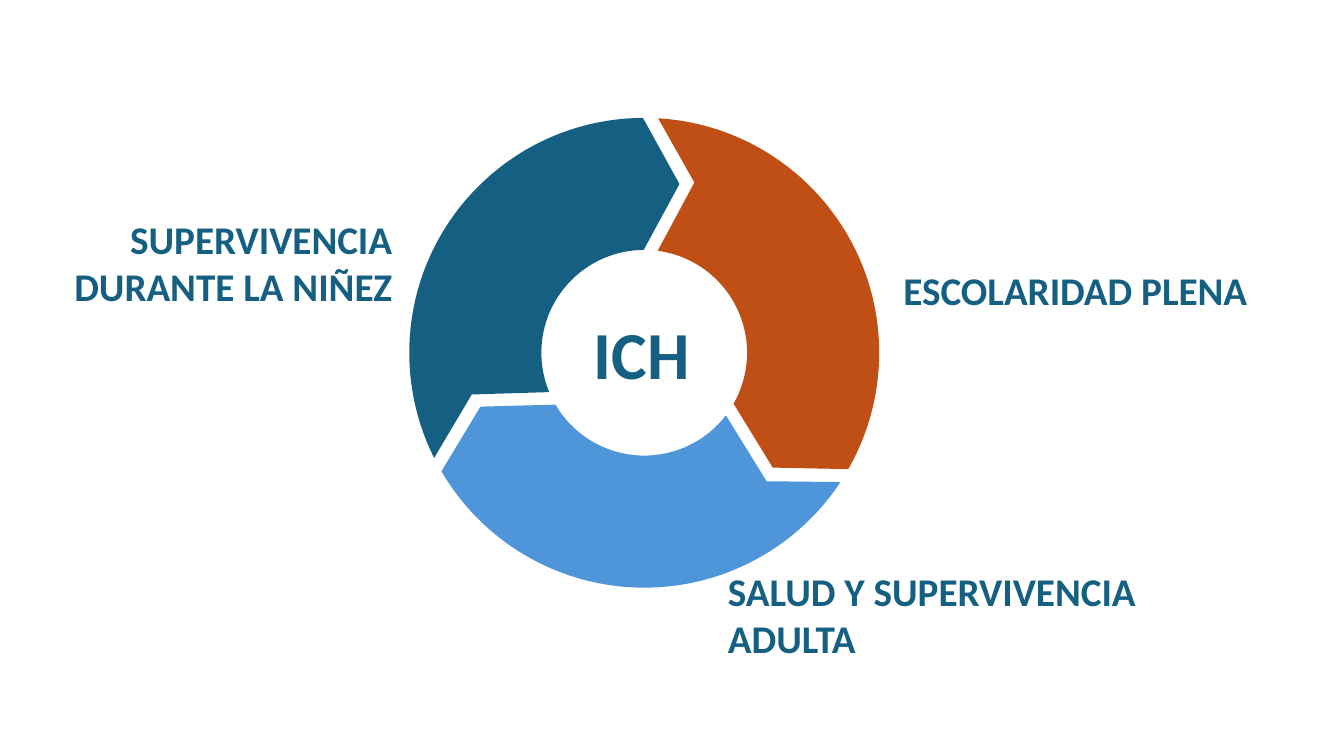
import math
from dataclasses import dataclass

from lxml import etree
from pptx import Presentation
from pptx.dml.color import RGBColor
from pptx.enum import text
from pptx.oxml.ns import qn
from pptx import util as u
from pptx.shapes.autoshape import Shape
from pptx.shapes.shapetree import SlideShapes
from pptx.slide import Slide

PX = 9144  # EMU per px, 100 px to the inch
TEAL = RGBColor(0x15, 0x60, 0x82)
ORANGE = RGBColor(0xC0, 0x4F, 0x15)
BLUE = RGBColor(0x4E, 0x95, 0xD9)

CENTRE = (639, 350)
OUTER, INNER = 233, 102
SEGMENT_COLORS = (ORANGE, BLUE, TEAL)  # clockwise from the top

Point = tuple[int, int]


@dataclass(frozen=True)
class Label:
    text: str
    left: int
    top: int
    width: int
    height: int
    align: text.PP_ALIGN = text.PP_ALIGN.LEFT


@dataclass(frozen=True)
class Step:
    """Move to a point in EMU, curved when control points are given."""
    end: Point
    controls: tuple[Point, ...] = ()


LABELS = (
    Label("SUPERVIVENCIA DURANTE LA NIÑEZ", 23, 214, 366, 94, text.PP_ALIGN.RIGHT),
    Label("SALUD Y SUPERVIVENCIA ADULTA", 722, 563, 506, 94),
    Label("ESCOLARIDAD PLENA", 896, 264, 417, 47),
)
HEADING = Label("ICH", 589, 310, 201, 81)


def px(n: int) -> u.Emu:
    return u.Emu(n * PX)


def polar(radius: float, angle: float) -> Point:
    """Point in EMU, with the angle in degrees clockwise from the top."""
    a = math.radians(angle)
    x, y = CENTRE
    return (round((x + radius * math.sin(a)) * PX),
            round((y - radius * math.cos(a)) * PX))


def arc(radius: float, start: float, end: float) -> Step:
    """Approximate an arc by one cubic curve."""
    sweep = math.radians(end - start)
    reach = 4 / 3 * math.tan(sweep / 4)
    handle = radius * math.hypot(1, reach)
    lean = math.degrees(math.atan(reach))
    return Step(polar(radius, end),
                (polar(handle, start + lean), polar(handle, end - lean)))


def add_segment(shapes: SlideShapes, turn: int, color: RGBColor) -> Shape:
    """Draw a third of the ring: notched at its start, pointed at its end."""
    extreme = 90 + turn // 120 * 90  # side of the ring that the segment touches
    steps = [
        arc(OUTER, turn + 3.4, extreme),
        arc(OUTER, extreme, turn + 119.7),
        Step(polar(171, turn + 131.8)),
        Step(polar(INNER, turn + 119.7)),
        arc(INNER, turn + 119.7, extreme),
        arc(INNER, extreme, turn + 7.5),
        Step(polar(176, turn + 16.4)),
    ]
    builder = shapes.build_freeform(*polar(OUTER, turn + 3.4), scale=1.0)
    builder.add_line_segments([step.end for step in steps], close=True)
    sp = builder.convert_to_shape()
    bend(sp, steps)
    sp.shadow.inherit = False
    sp.fill.solid()
    sp.fill.fore_color.rgb = color
    sp.line.fill.background()
    return sp


def bend(sp: Shape, steps: list[Step]) -> None:
    """Turn the outline's lines into curves where a step has controls."""
    lines = list(sp.element.iter(qn("a:lnTo")))
    for line, step in zip(lines, steps):
        if not step.controls:
            continue
        line.tag = qn("a:cubicBezTo")
        for i, (x, y) in enumerate(step.controls):
            pt = etree.Element(qn("a:pt"), x=str(x - sp.left), y=str(y - sp.top))
            line.insert(i, pt)


def write(sp: Shape, content: str, *, size: int, align: text.PP_ALIGN,
          color: RGBColor = TEAL, bold: bool = True, font: str = "Calibri") -> None:
    tf = sp.text_frame
    tf.margin_left = tf.margin_top = tf.margin_right = tf.margin_bottom = 0
    tf.word_wrap = True
    tf.auto_size = text.MSO_AUTO_SIZE.SHAPE_TO_FIT_TEXT
    tf.vertical_anchor = text.MSO_ANCHOR.TOP
    p = tf.paragraphs[0]
    p.alignment = align
    p.space_after = u.Pt(12)
    r = p.add_run()
    r.text = content
    r.font.name = font
    r.font.size = u.Pt(size)
    r.font.bold = bold
    r.font.color.rgb = color


def add_label(slide: Slide, label: Label) -> None:
    box = map(px, (label.left, label.top, label.width, label.height))
    sp = slide.shapes.add_textbox(*box)
    write(sp, label.text, size=28, align=label.align)


def set_heading(slide: Slide, label: Label) -> None:
    sp = slide.shapes.title
    sp.left, sp.top = px(label.left), px(label.top)
    sp.width, sp.height = px(label.width), px(label.height)
    write(sp, label.text, size=48, align=label.align)


def main() -> None:
    prs = Presentation()
    prs.slide_width, prs.slide_height = px(1333), px(750)
    slide = prs.slides.add_slide(prs.slide_layouts.get_by_name("Title Only"))
    for i, color in enumerate(SEGMENT_COLORS):
        add_segment(slide.shapes, i * 120, color)
    for label in LABELS:
        add_label(slide, label)
    set_heading(slide, HEADING)
    prs.save("out.pptx")


if __name__ == "__main__":
    main()
